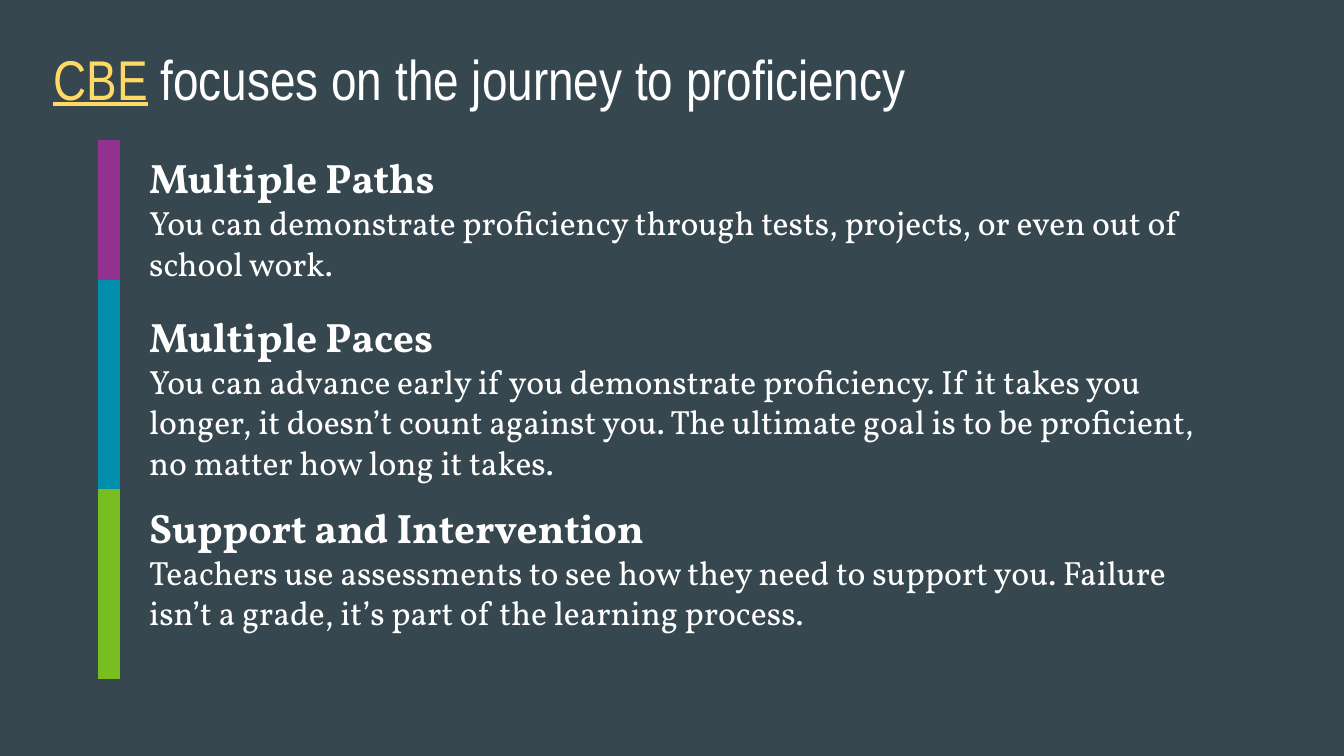
from pptx import Presentation
from pptx.dml.color import RGBColor
from pptx.enum.shapes import MSO_SHAPE
from pptx.enum.text import MSO_ANCHOR, MSO_AUTO_SIZE, PP_ALIGN
from pptx.util import Cm, Pt

COLOURS = {"background": "37474F", "text": "FFFFFF", "accent": "FFD966",
           "purple": "93328E", "blue": "008EAA", "green": "78BE20"}

TITLE = [("CBE", "accent", True),
         (" focuses on the journey to proficiency", "text", False)]

SECTIONS = [
    {"heading": "Multiple Paths",
     "body": "You can demonstrate proficiency through tests, projects, "
             "or even out of school work.",
     "colour": "purple", "text_top": 2.64, "bar_top": 2.64, "bar_height": 3.2},
    {"heading": "Multiple Paces",
     "body": "You can advance early if you demonstrate proficiency. If it takes you "
             "longer, it doesn’t count against you. The ultimate goal is to be "
             "proficient, no matter how long it takes.",
     "colour": "blue", "text_top": 5.64, "bar_top": 5.3, "bar_height": 3.94},
    {"heading": "Support and Intervention",
     "body": "Teachers use assessments to see how they need to support you. "
             "Failure isn’t a grade, it’s part of the learning process.",
     "colour": "green", "text_top": 9.25, "bar_top": 9.25, "bar_height": 3.58},
]


def colour(name):
    return RGBColor.from_string(COLOURS[name])


def add_span(para, text, font, size, ink="text", bold=False, underline=False):
    span = para.add_run()
    span.text = text
    span.font.name = font
    span.font.size = Pt(size)
    span.font.bold = bold
    span.font.underline = underline
    span.font.color.rgb = colour(ink)


def format_frame(frame, anchor):
    frame.word_wrap = True
    frame.auto_size = MSO_AUTO_SIZE.NONE
    frame.vertical_anchor = anchor
    frame.margin_left = frame.margin_right = Cm(0.25)
    frame.margin_top = frame.margin_bottom = Cm(0.25)


def add_title(page):
    title = page.shapes.title
    title.left, title.top, title.width, title.height = Cm(0.76), Cm(0.79), Cm(23.37), Cm(1.57)
    format_frame(title.text_frame, MSO_ANCHOR.BOTTOM)
    para = title.text_frame.paragraphs[0]
    para.alignment = PP_ALIGN.LEFT
    for text, ink, underline in TITLE:
        add_span(para, text, "Arial Narrow", 30, ink, underline=underline)


def add_section_text(page, section):
    box = page.shapes.add_textbox(Cm(2.57), Cm(section["text_top"]), Cm(20.57), Cm(1))
    frame = box.text_frame
    format_frame(frame, MSO_ANCHOR.TOP)
    add_span(frame.paragraphs[0], section["heading"], "Vollkorn", 22, bold=True)
    add_span(frame.add_paragraph(), section["body"], "Vollkorn", 18)


def add_bar(page, section):
    bar = page.shapes.add_shape(MSO_SHAPE.FLOWCHART_PROCESS, Cm(1.85),
                                Cm(section["bar_top"]), Cm(0.42), Cm(section["bar_height"]))
    bar.shadow.inherit = False
    bar.fill.solid()
    bar.fill.fore_color.rgb = colour(section["colour"])
    bar.line.fill.background()


def main():
    """Build the slide on the journey to proficiency."""
    deck = Presentation()
    deck.slide_width, deck.slide_height = Cm(25.4), Cm(14.29)
    page = deck.slides.add_slide(deck.slide_layouts[5])
    page.background.fill.solid()
    page.background.fill.fore_color.rgb = colour("background")
    add_title(page)
    for section in SECTIONS:
        add_section_text(page, section)
    for section in SECTIONS:
        add_bar(page, section)
    deck.save("out.pptx")


if __name__ == "__main__":
    main()
